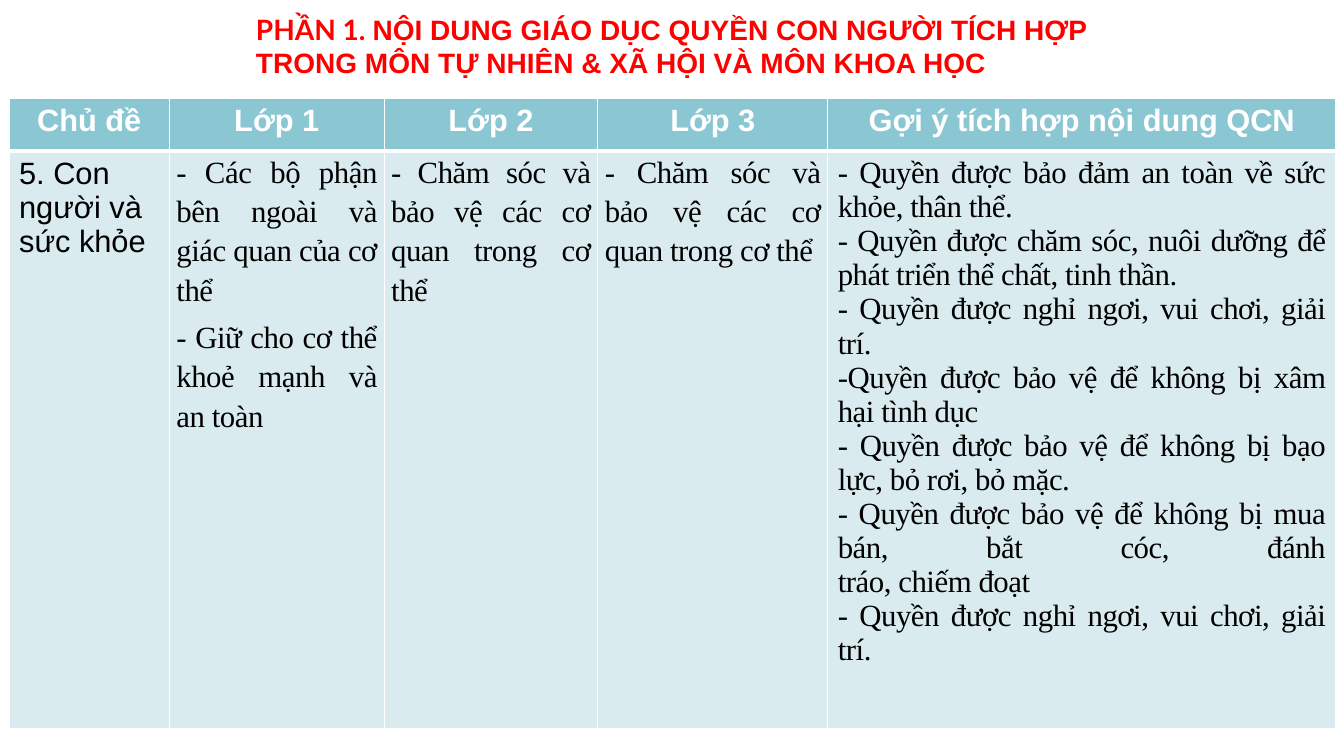
from dataclasses import dataclass
from lxml.etree import SubElement
from pptx import Presentation
from pptx.dml.color import RGBColor as RGB
from pptx.enum.text import MSO_AUTO_SIZE as Fit, PP_ALIGN as Al
from pptx.oxml import parse_xml
from pptx.oxml.ns import nsdecls, qn
from pptx.util import Inches, Pt


@dataclass(frozen=True)
class Theme:
    red: str = "FF0000"
    white: str = "FFFFFF"
    black: str = "000000"
    head: str = "8AC7D3"
    body: str = "DAEBEF"
    title: int = 20
    cell: int = 22
    sans: str = "Arial"
    lead: str = "Lato"
    serif: str = "Times New Roman"


def apply(item, vals):
    for name, val in vals.items():
        setattr(item, name, val)


class Page:
    def __init__(self, deck, theme):
        self.slide = deck.slides.add_slide(deck.slide_layouts[6])
        self.theme = theme

    def text(self, para, words, size, face, color, bold=False, track=0):
        """Add styled runs, with a line break at each newline; track is in points."""
        for i, part in enumerate(words.split("\n")):
            if i:
                para.add_line_break()
            run = para.add_run()
            run.text = part
            apply(run.font, {"size": Pt(size), "name": face, "bold": bold})
            run.font.color.rgb = RGB.from_string(color)
            if track:
                run._r.get_or_add_rPr().set("spc", str(round(track * 100)))

    def title(self, parts, x, y, w, h):
        box = self.slide.shapes.add_textbox(*map(Inches, (x, y, w, h)))
        frame = box.text_frame
        apply(frame, {"word_wrap": True, "auto_size": Fit.SHAPE_TO_FIT_TEXT})
        t = self.theme
        for words, face in parts:
            self.text(frame.paragraphs[0], words, t.title, face, t.red, True)

    def table(self, x, y, h, cols, rows):
        shape = self.slide.shapes.add_table(
            len(rows), len(cols), *map(Inches, (x, y, sum(cols), h)))
        grid = shape.table
        for col, width in zip(grid.columns, cols):
            col.width = Inches(width)
        for row, high in zip(grid.rows, rows):
            row.height = Inches(high)
        shape.height = Inches(h)
        return grid

    def cell(self, cell, lines, fill, base=1, align=None, gap=None, ins=None, **font):
        """Fill a cell; gap is the space around spread lines, base the lower border."""
        cell.fill.solid()
        cell.fill.fore_color.rgb = RGB.from_string(fill)
        self.border(cell, base)
        if ins is not None:
            apply(cell, {"margin_left": Inches(ins), "margin_right": Inches(ins),
                         "margin_top": 0, "margin_bottom": 0})
        frame = cell.text_frame
        for i, line in enumerate(lines):
            para = frame.add_paragraph() if i else frame.paragraphs[0]
            para.alignment = align
            if gap:
                apply(para, {"line_spacing": 1.15, "space_after": Pt(gap)})
                if i:
                    para.space_before = Pt(gap)
            self.text(para, line, self.theme.cell, **font)

    def border(self, cell, base):
        props = cell._tc.get_or_add_tcPr()
        for i, side in enumerate("LRTB"):
            width = Pt(base if side == "B" else 1)
            line = parse_xml(f'<a:ln{side} {nsdecls("a")} w="{width}"/>')
            fill = SubElement(line, qn("a:solidFill"))
            SubElement(fill, qn("a:srgbClr"), val=self.theme.white)
            props.insert(i, line)


HEADS = ["Chủ đề", "Lớp 1", "Lớp 2", "Lớp 3", "Gợi ý tích hợp nội dung QCN"]
TOPIC = ["5. Con người và sức khỏe"]
CARE = ["- Chăm sóc và bảo vệ các cơ quan trong cơ thể"]
GRADES = [
    ["- Các bộ phận bên ngoài và giác quan của cơ thể",
     "- Giữ cho cơ thể khoẻ mạnh và an toàn"],
    CARE,
    CARE,
]
REST = "- Quyền được nghỉ ngơi, vui chơi, giải trí."
RIGHTS = [
    "- Quyền được bảo đảm an toàn về sức khỏe, thân thể.",
    "- Quyền được chăm sóc, nuôi dưỡng để phát triển thể chất, tinh thần.",
    REST,
    "-Quyền được bảo vệ để không bị xâm hại tình dục",
    "- Quyền được bảo vệ để không bị bạo lực, bỏ rơi, bỏ mặc.",
    "- Quyền được bảo vệ để không bị mua bán, bắt cóc, đánh\ntráo, chiếm đoạt",
    REST,
]


def main():
    deck = Presentation()
    apply(deck, {"slide_width": Inches(13.33), "slide_height": Inches(7.5)})
    t = Theme()
    page = Page(deck, t)
    page.title([
        ("PHẦN 1. ", t.lead),
        ("NỘI DUNG GIÁO DỤC QUYỀN CON NGƯỜI TÍCH HỢP "
         "TRONG MÔN TỰ NHIÊN & XÃ HỘI VÀ MÔN KHOA HỌC", t.sans),
    ], 2.44, 0.07, 8.76, 1.13)

    grid = page.table(0.09, 0.98, 6.58, [1.59, 2.13, 2.12, 2.28, 5.04], [0.52, 5.73])
    for i, head in enumerate(HEADS):
        page.cell(grid.cell(0, i), [head], t.head, base=3, align=Al.CENTER,
                  face=t.sans, color=t.white, bold=True)
    page.cell(grid.cell(1, 0), TOPIC, t.body, face=t.sans, color=t.black)
    prose = {"align": Al.JUSTIFY, "face": t.serif, "color": t.black, "track": -0.3}
    for i, lines in enumerate(GRADES, 1):
        page.cell(grid.cell(1, i), lines, t.body, gap=3, ins=0.07, **prose)
    page.cell(grid.cell(1, 4), RIGHTS, t.body, **prose)
    deck.save("out.pptx")


if __name__ == "__main__":
    main()
